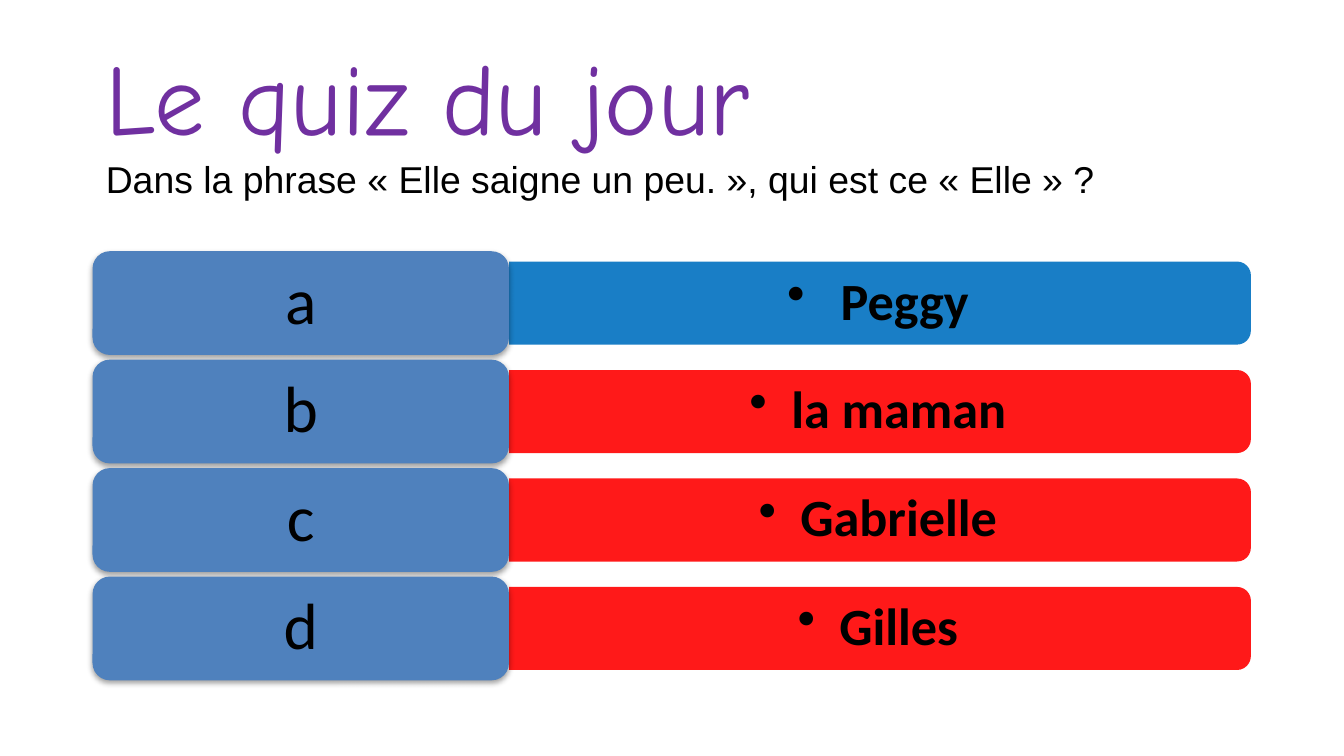
import pptx
import pptx.util
import pptx.dml.color
import pptx.enum.shapes
import pptx.enum.text
import pptx.oxml
import pptx.oxml.ns

Cm, Pt = pptx.util.Cm, pptx.util.Pt
Kind = pptx.enum.shapes.MSO_SHAPE
Align = pptx.enum.text.PP_ALIGN
NS = pptx.oxml.ns.nsdecls("a")

# Answers: letter, text, bar colour
ROWS = [
    ("a", " Peggy", "0070C0"),
    ("b", "la maman", "FF0000"),
    ("c", "Gabrielle", "FF0000"),
    ("d", "Gilles", "FF0000"),
]
LEFT, TOP, PITCH = 1.75, 4.75, 2.05
TILE_W, TILE_H = 7.87, 1.96
BAR_W, BAR_H = 14.02, 1.57


def color(code):
    return pptx.dml.color.RGBColor.from_string(code)


def write(para, text, font="Calibri", size=28, ink="000000", bold=False):
    run = para.add_run()
    run.text = text
    run.font.name = font
    run.font.size = Pt(size)
    run.font.bold = bold
    run.font.color.rgb = color(ink)


def add_box(slide, x, y, w, h, pad_x=0.25, pad_y=0.13):
    box = slide.shapes.add_textbox(Cm(x), Cm(y), Cm(w), Cm(h))
    frame = box.text_frame
    frame.word_wrap = True
    frame.vertical_anchor = pptx.enum.text.MSO_ANCHOR.MIDDLE
    frame.margin_left = frame.margin_right = Cm(pad_x)
    frame.margin_top = frame.margin_bottom = Cm(pad_y)
    return frame.paragraphs[0]


def add_block(slide, kind, x, y, w, h, fill):
    block = slide.shapes.add_shape(kind, Cm(x), Cm(y), Cm(w), Cm(h))
    block.shadow.inherit = False
    block.fill.solid()
    block.fill.fore_color.rgb = color(fill)
    block.line.fill.background()
    return block


def center(para):
    para.alignment = Align.CENTER
    para.line_spacing = 0.9


def add_bullet(para):
    props = para._p.get_or_add_pPr()
    props.set("marL", str(Cm(0.79)))
    props.set("indent", str(-Cm(0.79)))
    props.append(pptx.oxml.parse_xml(f'<a:buChar {NS} char="•"/>'))


def add_bar(slide, mid, text, fill):
    # The bar is a tall shape turned to the right
    x = LEFT + TILE_W
    bar = add_block(slide, Kind.ROUND_2_SAME_RECTANGLE,
                    x + (BAR_W - BAR_H) / 2, mid - BAR_W / 2,
                    BAR_H, BAR_W, fill)
    bar.rotation = 90
    tint = bar.fill._xPr.find(".//" + pptx.oxml.ns.qn("a:srgbClr"))
    tint.append(pptx.oxml.parse_xml(f'<a:alpha {NS} val="90000"/>'))
    para = add_box(slide, x, mid - 0.71, 13.94, 1.42, 0.3, 0.15)
    center(para)
    add_bullet(para)
    write(para, text, bold=True)


def add_tile(slide, y, letter):
    tile = add_block(slide, Kind.ROUNDED_RECTANGLE,
                     LEFT, y, TILE_W, TILE_H, "4F81BD")
    glow = tile._element.spPr.find(pptx.oxml.ns.qn("a:effectLst"))
    glow.append(pptx.oxml.parse_xml(
        f'<a:outerShdw {NS} blurRad="{Pt(3.1)}" dist="{Pt(1.6)}" '
        'dir="5400000" rotWithShape="0"><a:srgbClr val="000000">'
        '<a:alpha val="38000"/></a:srgbClr></a:outerShdw>'))
    para = add_box(slide, LEFT + 0.1, y + 0.1,
                   TILE_W - 0.2, TILE_H - 0.2, 0.38, 0.18)
    center(para)
    write(para, letter, size=35)


def main():
    deck = pptx.Presentation()
    deck.slide_width, deck.slide_height = Cm(25.4), Cm(14.29)
    slide = deck.slides.add_slide(deck.slide_layouts[6])

    # Title and question
    para = add_box(slide, LEFT, 0.51, 21.9, 3.43)
    write(para, "Le quiz du jour", font="Comic Neue", size=54, ink="7030A0")
    para.add_line_break()
    write(para, "Dans la phrase «\u00a0Elle saigne un peu.\u00a0», "
          "qui est ce «\u00a0Elle\u00a0» ?".replace("\u00a0", " "),
          font="Arial", size=20)

    # Answer rows
    for i, (letter, text, fill) in enumerate(ROWS):
        y = TOP + i * PITCH
        add_bar(slide, y + TILE_H / 2, text, fill)
        add_tile(slide, y, letter)

    deck.save("out.pptx")


if __name__ == "__main__":
    main()
